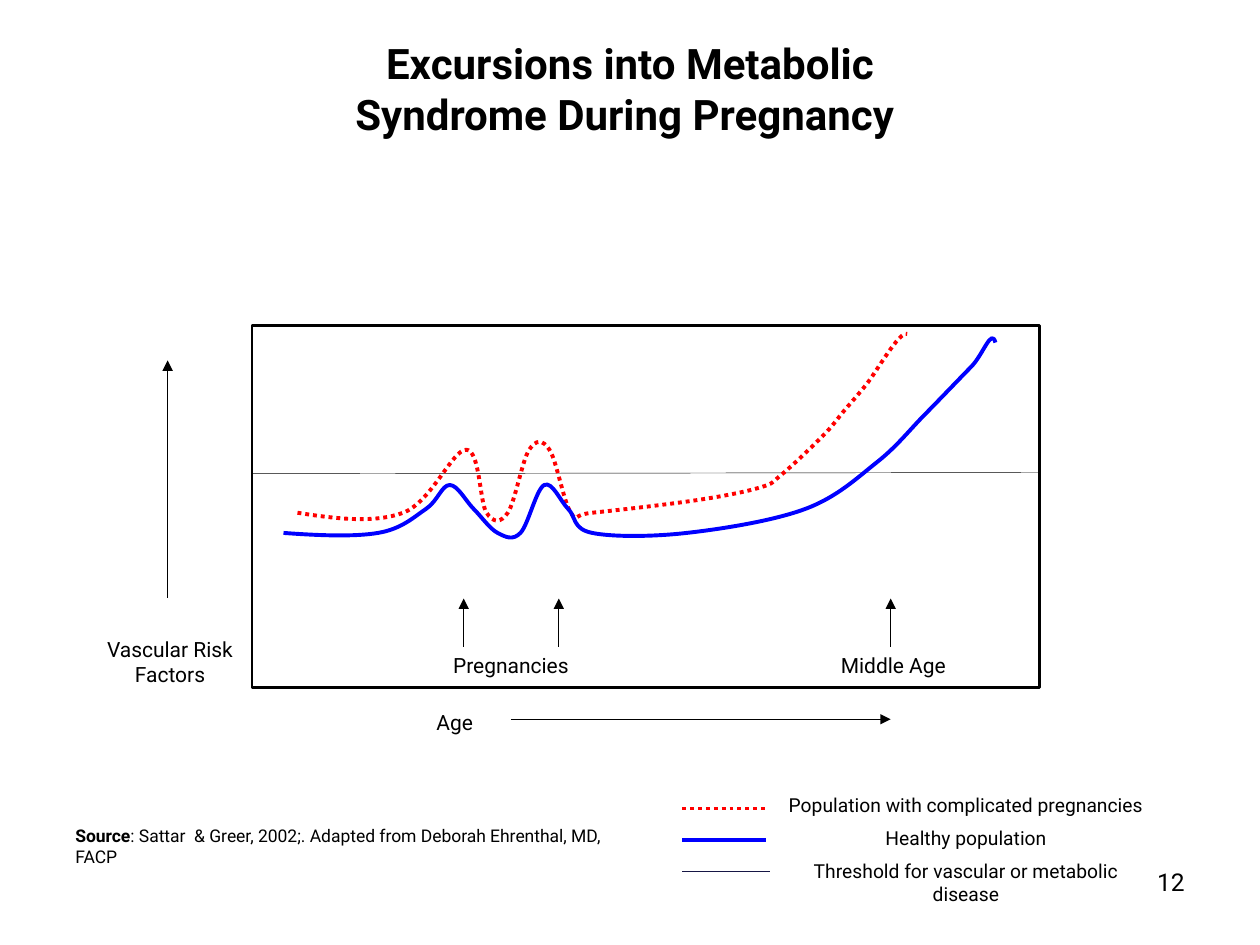
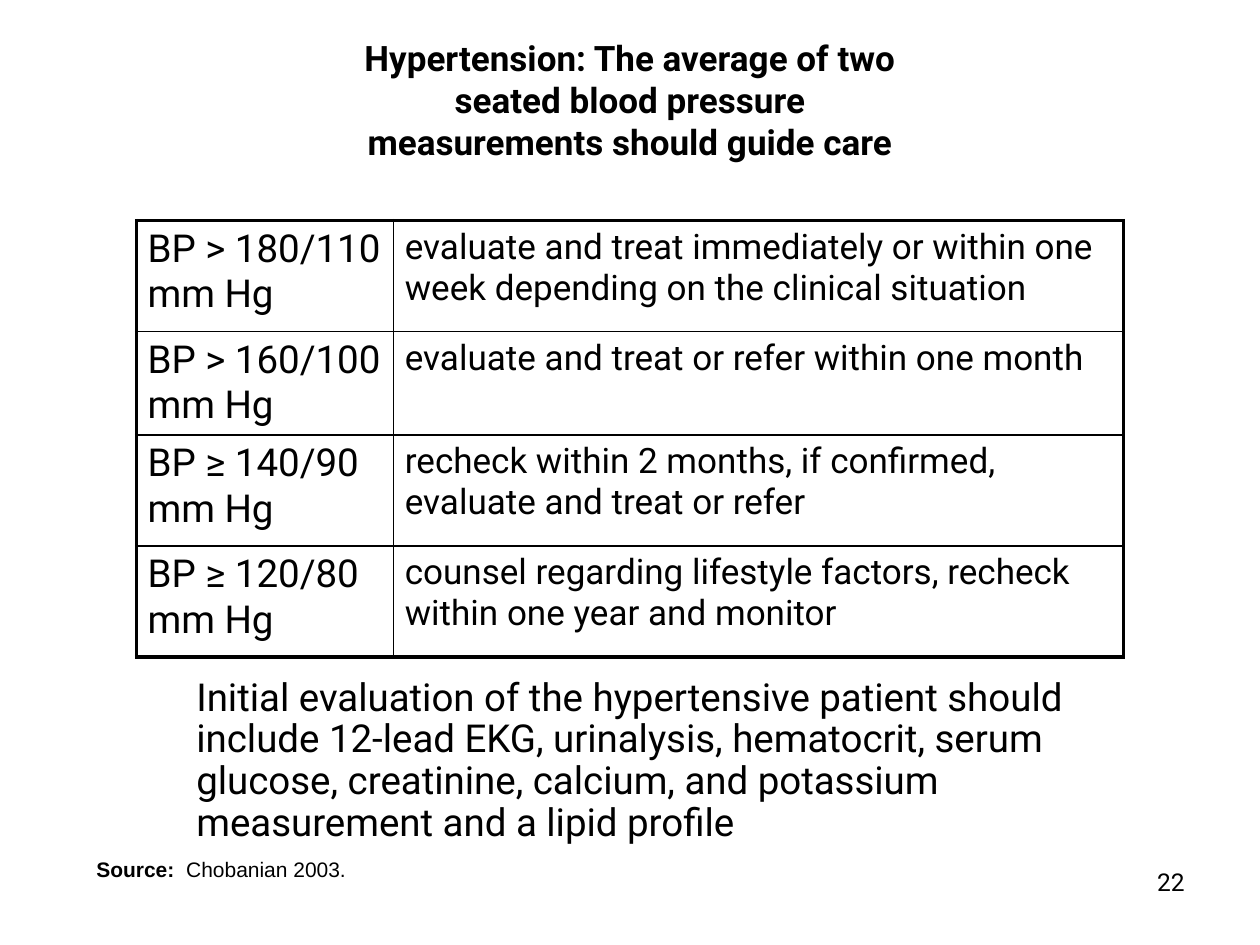
from lxml import etree
from pptx import Presentation
from pptx.dml.color import RGBColor
from pptx.enum.dml import MSO_LINE
from pptx.enum.shapes import MSO_CONNECTOR, MSO_SHAPE
from pptx.enum.text import MSO_ANCHOR, PP_ALIGN
from pptx.oxml.ns import qn
from pptx.util import Pt

LEFT, CENTER, RIGHT = PP_ALIGN.LEFT, PP_ALIGN.CENTER, PP_ALIGN.RIGHT
TOP, MIDDLE, BOTTOM = MSO_ANCHOR.TOP, MSO_ANCHOR.MIDDLE, MSO_ANCHOR.BOTTOM
DOTTED = MSO_LINE.ROUND_DOT
STRAIGHT = MSO_CONNECTOR.STRAIGHT
RECTANGLE = MSO_SHAPE.RECTANGLE
BLANK_LAYOUT = 6

COLORS = {
    "ink": "000000",
    "paper": "FFFFFF",
    "complicated": "FF0000",
    "healthy": "0000FF",
    "threshold": "161645",
}

COMPLICATED_KNOTS = [
    (96.5, 271.4), (170, 293), (230.4, 293), (266.4, 257), (278, 293), (290.2, 293),
    (302.4, 257), (314, 257), (326.2, 293), (338.4, 293), (398.2, 285.8),
    (434.2, 278.6), (446.4, 271.4), (470.2, 249.1), (482.4, 234.7),
    (494.6, 220.3), (518.4, 190.8), (520.6, 233.3),
]
HEALTHY_KNOTS = [
    (95, 295.9), (162, 304.6), (216, 304.6), (243.4, 290.9), (257, 277.2), (270.7, 290.9),
    (284.4, 304.6), (297.4, 304.6), (311, 277.2), (324.7, 290.9), (338.4, 304.6),
    (392.4, 304.6), (460.1, 290.9), (501.1, 264.2), (528.5, 236.9),
    (555.1, 209.5), (568.8, 195.8), (568.1, 261.4),
]
CARE_STEPS = [
    ("BP > 180/110 mm Hg",
     "evaluate and treat immediately or within one week depending on the clinical situation"),
    ("BP > 160/100 mm Hg", "evaluate and treat or refer within one month"),
    ("BP ≥ 140/90 mm Hg", "recheck within 2 months, if confirmed, evaluate and treat or refer"),
    ("BP ≥ 120/80 mm Hg",
     "counsel regarding lifestyle factors, recheck within one year and monitor"),
]


def curve_points(knots):
    points = [knots[1]]
    for before, start, end, after in zip(knots, knots[1:], knots[2:], knots[3:]):
        leaving = tuple(s + (e - b) / 6 for b, s, e in zip(before, start, end))
        arriving = tuple(e - (a - s) / 6 for s, e, a in zip(start, end, after))
        points += [leaving, arriving, end]
    return points


class Deck:
    def __init__(self):
        self.deck = Presentation()
        self.deck.slide_width, self.deck.slide_height = Pt(720), Pt(540)
        self.font = "Roboto"
        self.page = None

    def color(self, name):
        return RGBColor.from_string(COLORS[name])

    def style(self, font, size, bold=False, face=None):
        font.name, font.size, font.bold = face or self.font, Pt(size), bold
        font.color.rgb = self.color("ink")

    def stroke(self, line, color, width, dash=None):
        line.color.rgb = self.color(color)
        line.width = Pt(width)
        if dash:
            line.dash_style = dash

    def new_page(self, title, title_size, number, anchor=TOP):
        self.page = self.deck.slides.add_slide(self.deck.slide_layouts[BLANK_LAYOUT])
        self.text(title, (183, 18, 354, 78), title_size, CENTER, anchor, bold=True)
        self.text(str(number), (516, 492, 168, 37), 14, RIGHT)

    def text(self, text, area, size, align=LEFT, anchor=TOP, bold=False, face=None,
             space_after=0, line_spacing=1.0, indent=0):
        frame = self.page.shapes.add_textbox(*map(Pt, area)).text_frame
        frame.word_wrap = True
        frame.vertical_anchor = anchor
        frame.margin_left = Pt(7.2 + indent)
        frame.text = text
        for para in frame.paragraphs:
            para.alignment = align
            para.line_spacing = line_spacing
            para.space_after = Pt(space_after)
            for span in para.runs:
                self.style(span.font, size, bold, face)
        return frame

    def source(self, label, citation, area, size, face=None):
        frame = self.text(label, area, size, bold=True, face=face)
        span = frame.paragraphs[0].add_run()
        span.text = citation
        self.style(span.font, size, face=face)

    def frame(self, area, width):
        box = self.page.shapes.add_shape(RECTANGLE, *map(Pt, area))
        box.shadow.inherit = False
        box.fill.solid()
        box.fill.fore_color.rgb = self.color("paper")
        self.stroke(box.line, "ink", width)

    def line(self, start, end, color="ink", width=0.75, dash=None, arrow=False):
        connector = self.page.shapes.add_connector(STRAIGHT, *map(Pt, start + end))
        self.stroke(connector.line, color, width, dash)
        properties = connector._element.spPr
        if arrow:
            etree.SubElement(properties.find(qn("a:ln")), qn("a:tailEnd"), type="triangle")
        etree.SubElement(properties, qn("a:effectLst"))

    def curve(self, knots, color, width, dash=None):
        points = [(Pt(x), Pt(y)) for x, y in curve_points(knots)]
        builder = self.page.shapes.build_freeform(*points[0], scale=1.0)
        builder.add_line_segments(points[1:], close=False)
        shape = builder.convert_to_shape()
        shape.shadow.inherit = False
        shape.fill.background()
        self.stroke(shape.line, color, width, dash)
        outline = next(shape._element.iter(qn("a:path")))
        segments = outline.findall(qn("a:lnTo"))
        for first in range(0, len(segments), 3):
            bend = etree.SubElement(outline, qn("a:cubicBezTo"))
            for segment in segments[first:first + 3]:
                bend.append(segment[0])
                outline.remove(segment)

    def border(self, cell, side, width):
        properties = cell._tc.get_or_add_tcPr()
        line = etree.SubElement(properties, qn(f"a:ln{side}"), w=str(Pt(width)))
        fill = etree.SubElement(line, qn("a:solidFill"))
        etree.SubElement(fill, qn("a:srgbClr"), val=COLORS["ink"])

    def table(self, rows, left, top, widths, heights, sizes, outer=2.25, inner=1):
        table = self.page.shapes.add_table(
            len(rows), len(widths), Pt(left), Pt(top),
            Pt(sum(widths)), Pt(sum(heights))).table
        table.first_row = table.horz_banding = False
        for column, width in zip(table.columns, widths):
            column.width = Pt(width)
        last_row, last_column = len(rows) - 1, len(widths) - 1
        for r, texts in enumerate(rows):
            table.rows[r].height = Pt(heights[r])
            for c, text in enumerate(texts):
                cell = table.cell(r, c)
                cell.margin_left = cell.margin_right = Pt(6.4)
                cell.margin_bottom = Pt(2.4)
                cell.text = text
                self.style(cell.text_frame.paragraphs[0].runs[0].font, sizes[c])
                edges = {"L": c == 0, "R": c == last_column, "T": r == 0, "B": r == last_row}
                for side, is_outer in edges.items():
                    self.border(cell, side, outer if is_outer else inner)
                cell.fill.background()


def add_risk_page(deck):
    deck.new_page("Excursions into Metabolic Syndrome During Pregnancy ", 24, 12)
    deck.frame((144, 186, 450, 207), 1.5)
    deck.line((144, 270.7), (593.5, 270), width=0.25)
    deck.curve(COMPLICATED_KNOTS, "complicated", 2.25, DOTTED)
    deck.curve(HEALTHY_KNOTS, "healthy", 2.25)

    for event_x in (265, 319.3, 509):
        deck.line((event_x, 369.5), (event_x, 342), arrow=True)
    deck.line((95.8, 341.5), (95.8, 206), arrow=True)
    deck.line((292, 411), (509, 411), arrow=True)
    for label, area, anchor in (
        ("Pregnancies", (246, 369.5, 92, 18), TOP),
        ("Middle Age", (468, 369.5, 85, 24), TOP),
        ("Age", (240, 402, 39.6, 25), TOP),
        ("Vascular Risk Factors", (53.2, 360, 88, 36), BOTTOM),
    ):
        deck.text(label, area, 12, CENTER, anchor)

    legend = (
        ("Population with complicated pregnancies", "complicated", 2.25, DOTTED, 438),
        ("Healthy population", "healthy", 2.25, None, 438),
        ("Threshold for vascular or metabolic disease", "threshold", 0.5, None, 440),
    )
    for index, (_, color, width, dash, right) in enumerate(legend):
        y = 462 + 18 * index
        deck.line((390, y), (right, y), color, width, dash)
    deck.text("\n".join(entry[0] for entry in legend), (438, 450, 228, 54), 11, CENTER,
              space_after=5.4)
    deck.source("Source", ": Sattar  & Greer, 2002;. Adapted from Deborah Ehrenthal, MD, FACP",
                (36, 468, 330, 31), 10)


def add_hypertension_page(deck):
    deck.new_page("Hypertension: The average of two seated blood pressure "
                  "measurements should guide care", 20, 22, MIDDLE)
    deck.table(CARE_STEPS, 78, 126, (147, 417), (63.5, 59, 63.5, 63.5), (22, 20))
    deck.text("Initial evaluation of the hypertensive patient should include 12-lead EKG, "
              "urinalysis, hematocrit, serum glucose, creatinine, calcium, and potassium "
              "measurement and a lipid profile",
              (78, 384, 570, 102), 22, line_spacing=0.9, indent=27)
    deck.source("Source:  ", "Chobanian 2003.", (48, 486, 570, 22), 12, "Arial")


def main():
    deck = Deck()
    add_risk_page(deck)
    add_hypertension_page(deck)
    deck.deck.save("out.pptx")


if __name__ == "__main__":
    main()
